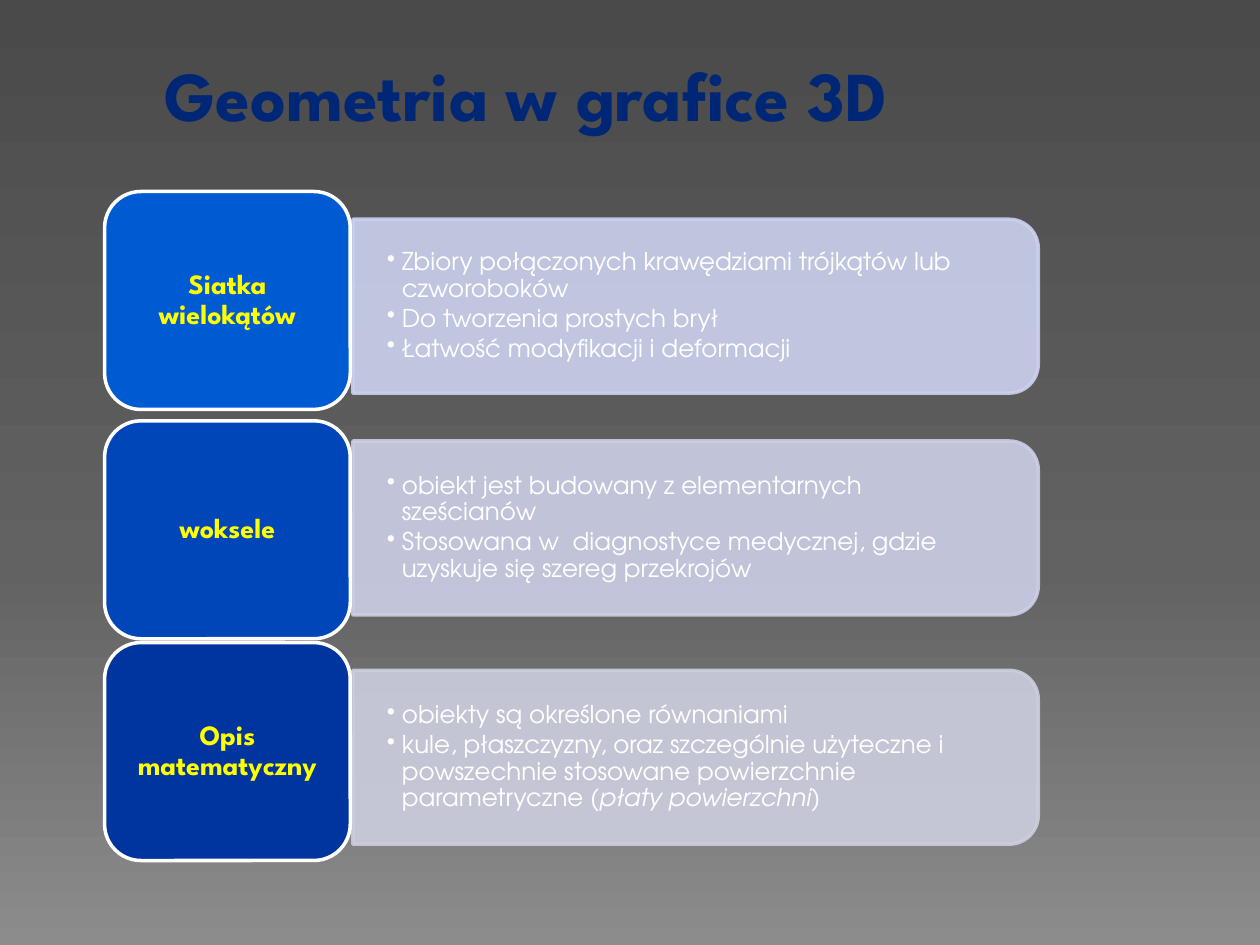
from copy import deepcopy
from dataclasses import dataclass

from lxml.etree import SubElement
from pptx import Presentation
from pptx.dml.color import RGBColor
from pptx.enum.shapes import MSO_SHAPE
from pptx.enum.text import MSO_ANCHOR, PP_ALIGN
from pptx.oxml.ns import qn
from pptx.util import Inches, Pt


@dataclass(frozen=True)
class Theme:
    """Colours, fonts and type sizes of the slide."""
    background: tuple = ((0, "4A4A4A"), (0.6, "626262"), (1, "8C8C8C"))
    title: str = "002776"
    label: str = "FFFF00"
    light: str = "FFFFFF"
    tiles: tuple = ("005BD3", "0046B9", "00349E")
    panels: tuple = ("CCD2EF", "CCCFE7", "CCCEDF")
    panel_opacity: int = 90
    heading_font: str = "League Spartan"
    body_font: str = "TeX Gyre Adventor"
    title_size: int = 40
    label_size: int = 16
    body_size: int = 14
    line_width: int = 2
    line_spacing: float = 0.9


class SlideBuilder:
    """Draws styled elements on a grid of 100 columns and 75 rows."""

    def __init__(self, presentation, theme):
        """Add a title-only slide to the presentation."""
        self.theme = theme
        self.column = presentation.slide_width / 100
        self.row = presentation.slide_height / 75
        self.slide = presentation.slides.add_slide(presentation.slide_layouts[5])

    def place(self, left, top, width, height):
        """Turn grid units into slide lengths."""
        return (round(left * self.column), round(top * self.row),
                round(width * self.column), round(height * self.row))

    def style_text(self, paragraph, font_name, size, color, bold=False):
        """Set the font of a whole paragraph."""
        font = paragraph.font
        font.name, font.size, font.bold = font_name, Pt(size), bold
        font.color.rgb = RGBColor.from_string(color)

    def set_insets(self, frame, horizontal, vertical):
        """Wrap, centre vertically and pad a text frame, in inches."""
        frame.word_wrap = True
        frame.vertical_anchor = MSO_ANCHOR.MIDDLE
        frame.margin_left = frame.margin_right = Inches(horizontal)
        frame.margin_top = frame.margin_bottom = Inches(vertical)

    def background(self):
        """Paint the vertical three-stop gradient."""
        fill = self.slide.background.fill
        fill.gradient()
        fill.gradient_angle = 270
        stop_list = self.slide.element.find(".//" + qn("a:gsLst"))
        stop_list.append(deepcopy(stop_list[-1]))
        for stop, (position, color) in zip(fill.gradient_stops, self.theme.background):
            stop.position = position
            stop.color.rgb = RGBColor.from_string(color)

    def title(self, text, *area):
        """Fill and format the title placeholder."""
        shape = self.slide.shapes.title
        shape.left, shape.top, shape.width, shape.height = self.place(*area)
        frame = shape.text_frame
        frame.text = text
        frame.word_wrap = False
        frame.vertical_anchor = MSO_ANCHOR.MIDDLE
        paragraph = frame.paragraphs[0]
        paragraph.alignment = PP_ALIGN.CENTER
        self.style_text(paragraph, self.theme.heading_font, self.theme.title_size,
                        self.theme.title, True)

    def box(self, kind, area, fill, line):
        """Add a filled and outlined preset shape."""
        shape = self.slide.shapes.add_shape(kind, *self.place(*area))
        shape.shadow.inherit = False
        shape.fill.solid()
        shape.fill.fore_color.rgb = RGBColor.from_string(fill)
        shape.line.color.rgb = RGBColor.from_string(line)
        shape.line.width = Pt(self.theme.line_width)
        return shape

    def panel(self, center_column, center_row, length, thickness, color):
        """Add a translucent panel with rounded right corners."""
        area = (center_column - thickness / 2, center_row - length / 2, thickness, length)
        shape = self.box(MSO_SHAPE.ROUND_2_SAME_RECTANGLE, area, color, color)
        shape.rotation = 90
        for element in shape.element.spPr.iter(qn("a:srgbClr")):
            SubElement(element, qn("a:alpha"), val=str(self.theme.panel_opacity * 1000))

    def tile(self, text, color, *area):
        """Add a rounded tile with a bold centred label."""
        shape = self.box(MSO_SHAPE.ROUNDED_RECTANGLE, area, color, self.theme.light)
        frame = shape.text_frame
        self.set_insets(frame, 0.07, 0.03)
        frame.text = text
        paragraph = frame.paragraphs[0]
        paragraph.alignment = PP_ALIGN.CENTER
        paragraph.line_spacing = self.theme.line_spacing
        self.style_text(paragraph, self.theme.heading_font, self.theme.label_size,
                        self.theme.label, True)

    def bullets(self, points, *area):
        """Add a bulleted list; every second part of a point is italic."""
        frame = self.slide.shapes.add_textbox(*self.place(*area)).text_frame
        self.set_insets(frame, 0.27, 0.14)
        for index, parts in enumerate(points):
            paragraph = frame.add_paragraph() if index else frame.paragraphs[0]
            paragraph.level = 1
            paragraph.line_spacing = self.theme.line_spacing
            paragraph.space_after = Pt(2)
            self.style_text(paragraph, self.theme.body_font, self.theme.body_size,
                            self.theme.light)
            for order, part in enumerate(parts):
                run = paragraph.add_run()
                run.text = part
                if order % 2:
                    run.font.italic = True
            properties = paragraph._p.get_or_add_pPr()
            properties.set("marL", str(Inches(0.12)))
            properties.set("indent", str(-Inches(0.12)))
            bullet = properties.makeelement(qn("a:buChar"), {"char": "•"})
            properties.find(qn("a:defRPr")).addprevious(bullet)


TOPICS = (
    ("Siatka wielokątów", 15.2, 24.3, (
        ("Zbiory połączonych krawędziami trójkątów lub czworoboków",),
        ("Do tworzenia prostych brył",),
        ("Łatwość modyfikacji i deformacji",))),
    ("woksele", 33.4, 41.9, (
        ("obiekt jest budowany z elementarnych sześcianów",),
        ("Stosowana w  diagnostyce medycznej, gdzie uzyskuje się szereg przekrojów",))),
    ("Opis matematyczny", 51, 60.1, (
        ("obiekty są określone równaniami",),
        ("kule, płaszczyzny, oraz szczególnie użyteczne i powszechnie stosowane "
         "powierzchnie parametryczne (", "płaty powierzchni", ")"))),
)


def main():
    """Build and save the slide."""
    presentation = Presentation()
    presentation.slide_width, presentation.slide_height = Inches(10), Inches(7.5)
    theme = Theme()
    builder = SlideBuilder(presentation, theme)
    builder.background()
    builder.title("Geometria w grafice 3D", 8.3, 3.6, 66.9, 7.7)
    for topic, tile_color, panel_color in zip(TOPICS, theme.tiles, theme.panels):
        label, tile_top, panel_center, points = topic
        builder.panel(55.2, panel_center, 54.4, 13.8, panel_color)
        builder.bullets(points, 28, panel_center - 6.25, 53.8, 12.5)
        builder.tile(label, tile_color, 8.3, tile_top, 19.5, 17.3)
    presentation.save("out.pptx")


if __name__ == "__main__":
    main()
